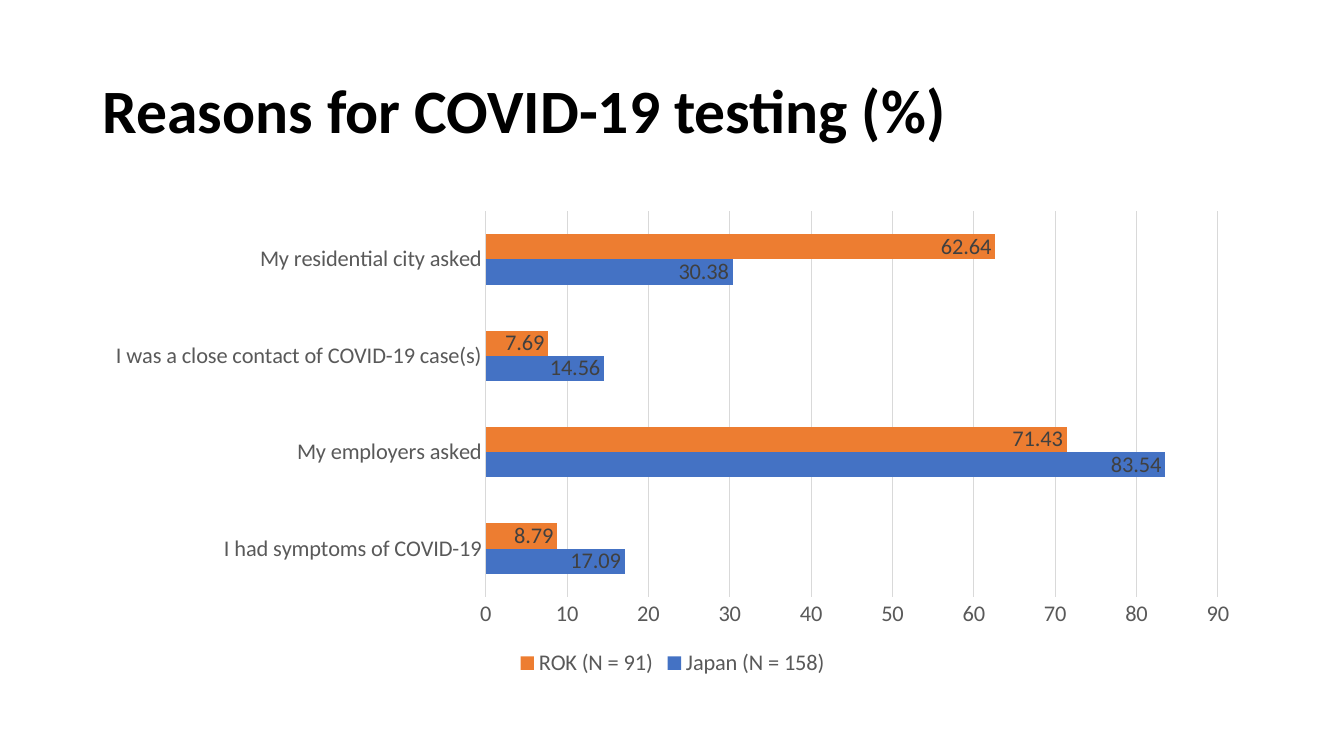
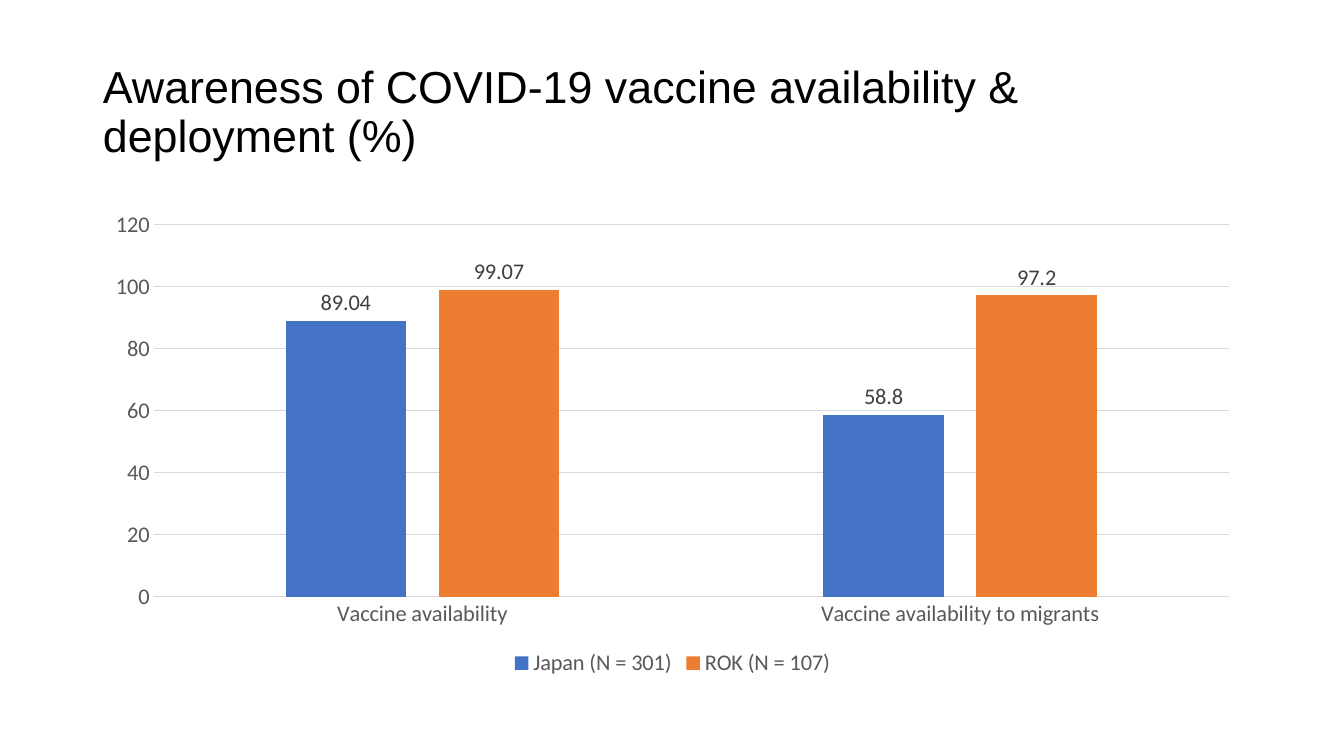
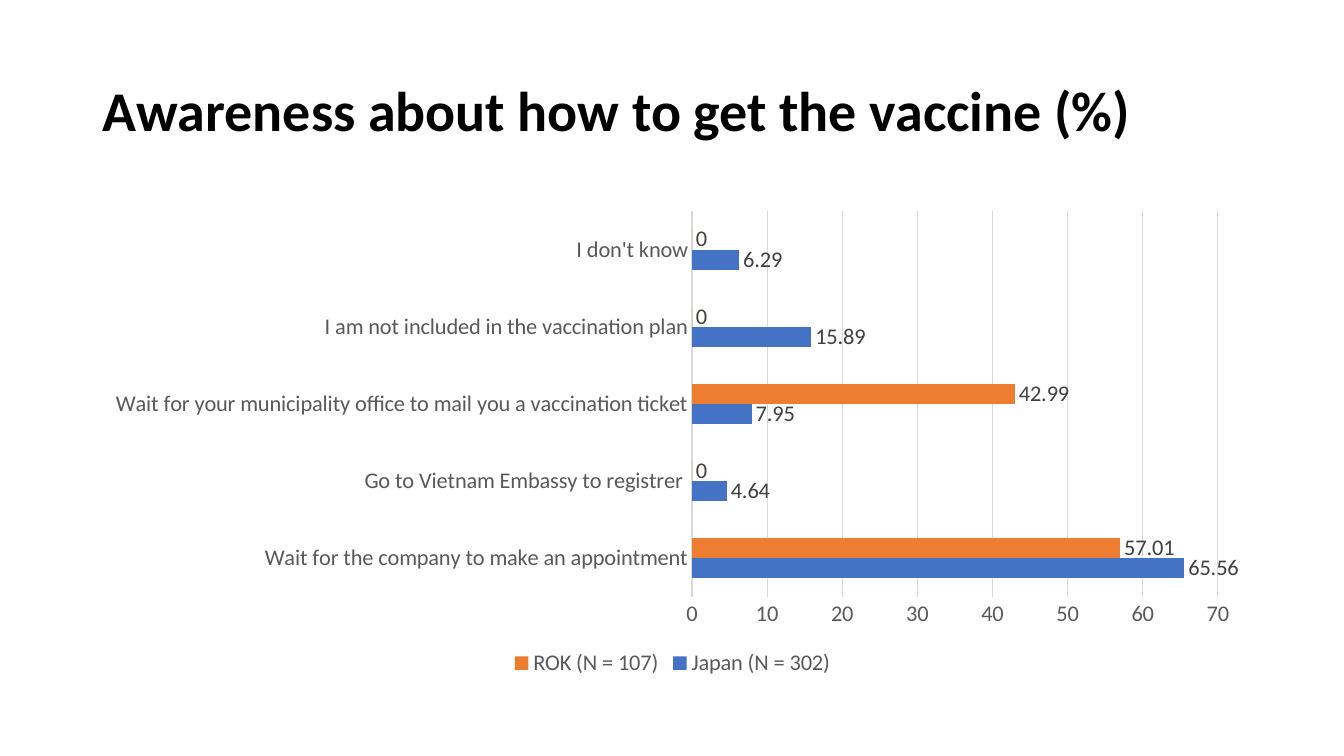
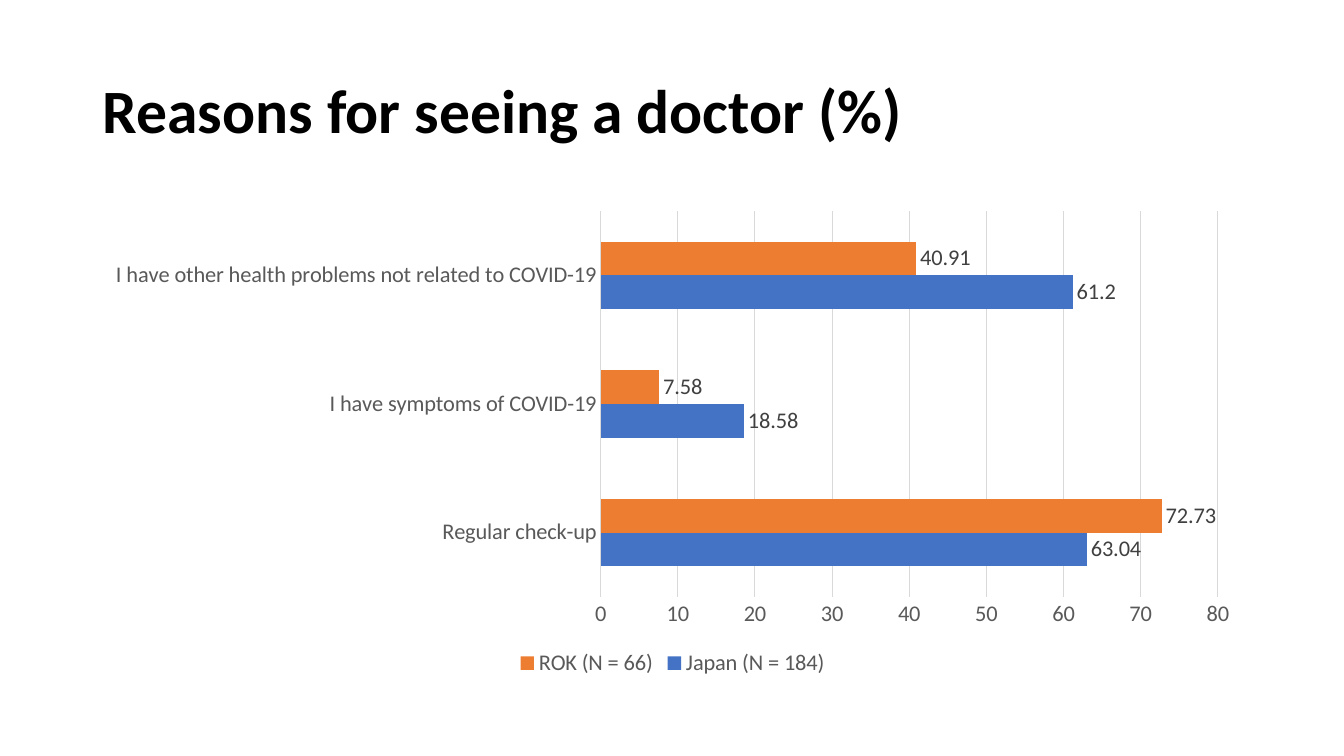
from dataclasses import dataclass

from pptx import Presentation
from pptx.chart.data import CategoryChartData
from pptx.dml.color import RGBColor
from pptx.enum.chart import (XL_CHART_TYPE, XL_LABEL_POSITION,
                             XL_LEGEND_POSITION, XL_TICK_MARK)
from pptx.enum.text import MSO_ANCHOR, MSO_AUTO_SIZE, PP_ALIGN
from pptx.util import Inches, Pt


@dataclass(frozen=True)
class Theme:
    ink: RGBColor = RGBColor(0x00, 0x00, 0x00)
    axis: RGBColor = RGBColor(0x59, 0x59, 0x59)
    label: RGBColor = RGBColor(0x40, 0x40, 0x40)
    grid: RGBColor = RGBColor(0xD9, 0xD9, 0xD9)
    japan: RGBColor = RGBColor(0x44, 0x72, 0xC4)
    rok: RGBColor = RGBColor(0xED, 0x7D, 0x31)
    font: str = "Calibri"
    plain: str = "Arial"
    big: int = 44
    mid: int = 40
    small: int = 32
    text: int = 16
    hair: float = 0.75


theme = Theme()
LEFT, WIDTH = Inches(0.92), Inches(11.5)
BAR, COLUMN = XL_CHART_TYPE.BAR_CLUSTERED, XL_CHART_TYPE.COLUMN_CLUSTERED
INSIDE, OUTSIDE = XL_LABEL_POSITION.INSIDE_END, XL_LABEL_POSITION.OUTSIDE_END
GAPS = {BAR: (182, 0), COLUMN: (219, -27)}  # gap width, overlap


def style(font, color, size=theme.text, name=theme.font, bold=False):
    font.name = name
    font.size = Pt(size)
    font.bold = bold
    font.color.rgb = color


def rule(line):
    line.color.rgb = theme.grid
    line.width = Pt(theme.hair)


# Title, size, font, chart type, label place, sample sizes (Japan, ROK),
# and rows of category, Japan, ROK
SLIDES = [
    ("Reasons for COVID-19 testing (%)", theme.big, theme.font,
     BAR, INSIDE, (158, 91), [
         ("I had symptoms of COVID-19", 17.09, 8.79),
         ("My employers asked", 83.54, 71.43),
         ("I was a close contact of COVID-19 case(s)", 14.56, 7.69),
         ("My residential city asked", 30.38, 62.64)]),
    ("Awareness of COVID-19 vaccine availability & deployment (%)",
     theme.small, theme.plain, COLUMN, OUTSIDE, (301, 107), [
         ("Vaccine availability", 89.04, 99.07),
         ("Vaccine availability to migrants", 58.8, 97.2)]),
    ("Awareness about how to get the vaccine (%)", theme.mid, theme.font,
     BAR, OUTSIDE, (302, 107), [
         ("Wait for the company to make an appointment", 65.56, 57.01),
         ("Go to Vietnam Embassy to registrer ", 4.64, 0),
         ("Wait for your municipality office to mail you a vaccination ticket",
          7.95, 42.99),
         ("I am not included in the vaccination plan", 15.89, 0),
         ("I don't know", 6.29, 0)]),
    ("Reasons for seeing a doctor (%)", theme.big, theme.font,
     BAR, OUTSIDE, (184, 66), [
         ("Regular check-up", 63.04, 72.73),
         ("I have symptoms of COVID-19", 18.58, 7.58),
         ("I have other health problems not related to COVID-19",
          61.2, 40.91)]),
]

deck = Presentation()
deck.slide_width, deck.slide_height = Inches(13.33), Inches(7.5)
layout = deck.slide_layouts.get_by_name("Title Only")

for text, size, face, kind, place, counts, rows in SLIDES:
    slide = deck.slides.add_slide(layout)

    title = slide.shapes.title
    title.left, title.top = LEFT, Inches(0.4)
    title.width, title.height = WIDTH, Inches(1.45)
    frame = title.text_frame
    frame.text = text
    frame.word_wrap = True
    frame.auto_size = MSO_AUTO_SIZE.NONE
    frame.vertical_anchor = MSO_ANCHOR.MIDDLE
    para = frame.paragraphs[0]
    para.alignment = PP_ALIGN.LEFT
    para.line_spacing = 0.9
    style(para.font, theme.ink, size, face, bold=face == theme.font)

    names, japan, rok = zip(*rows)
    data = CategoryChartData()
    data.categories = names
    data.add_series(f"Japan (N = {counts[0]})", japan)
    data.add_series(f"ROK (N = {counts[1]})", rok)
    chart = slide.shapes.add_chart(
        kind, LEFT, Inches(2), WIDTH, Inches(4.76), data).chart
    chart.has_title = False
    style(chart.font, theme.ink)

    chart.has_legend = True
    chart.legend.position = XL_LEGEND_POSITION.BOTTOM
    chart.legend.include_in_layout = False
    style(chart.legend.font, theme.axis)

    for axis in (chart.category_axis, chart.value_axis):
        axis.major_tick_mark = XL_TICK_MARK.NONE
        axis.minor_tick_mark = XL_TICK_MARK.NONE
        style(axis.tick_labels.font, theme.axis)
    rule(chart.category_axis.format.line)
    chart.value_axis.format.line.fill.background()
    rule(chart.value_axis.major_gridlines.format.line)

    plot = chart.plots[0]
    plot.vary_by_categories = False
    plot.gap_width, plot.overlap = GAPS[kind]
    for series, color in zip(plot.series, (theme.japan, theme.rok)):
        series.format.fill.solid()
        series.format.fill.fore_color.rgb = color
        series.invert_if_negative = False
        labels = series.data_labels
        labels.show_value = True
        labels.position = place
        style(labels.font, theme.label)

deck.save("out.pptx")
